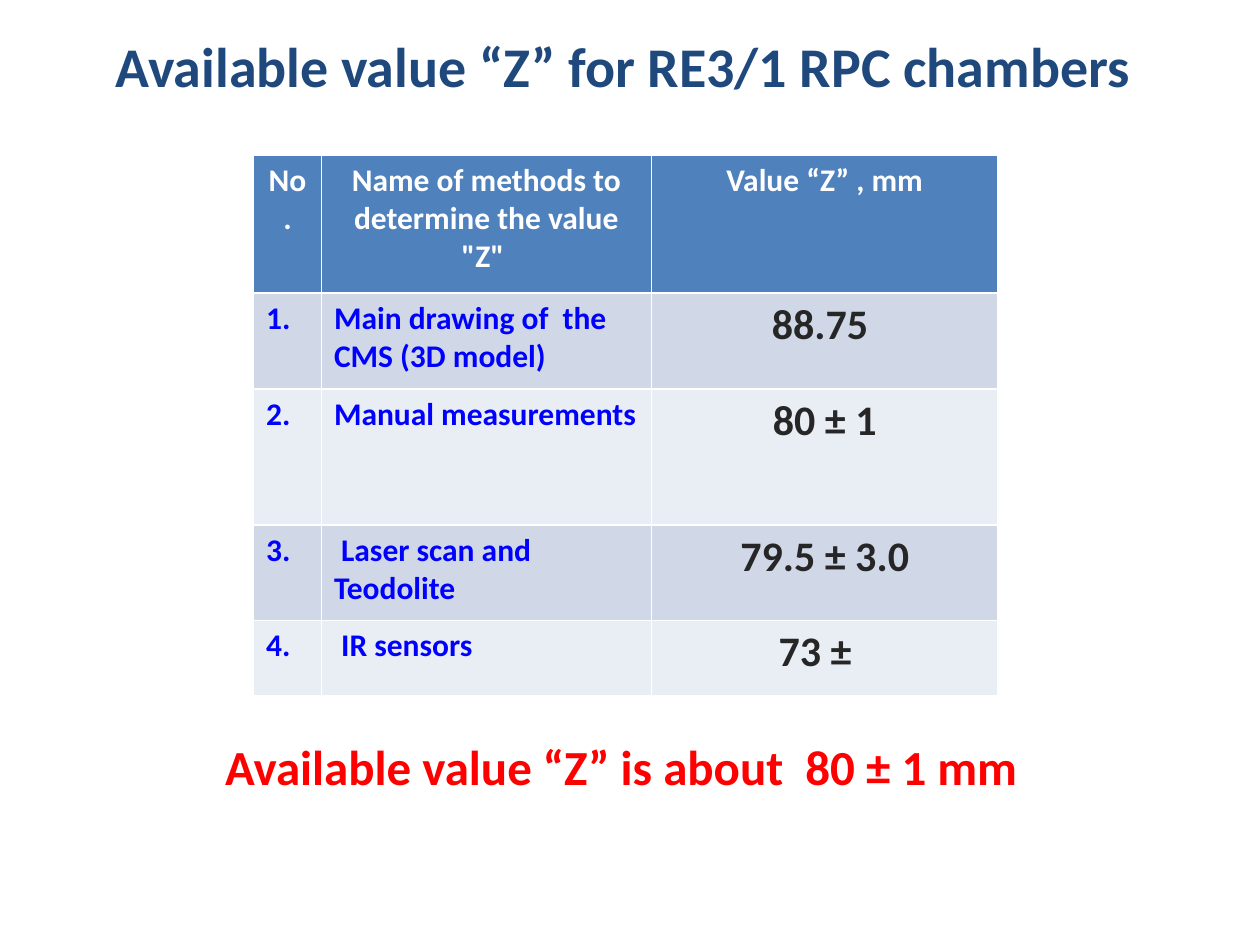
from pptx import Presentation
from pptx.dml.color import RGBColor
from pptx.enum.text import MSO_ANCHOR, PP_ALIGN
from pptx.util import Cm, Pt

LEFT, CENTER = PP_ALIGN.LEFT, PP_ALIGN.CENTER
MIDDLE = MSO_ANCHOR.MIDDLE
TITLE_ONLY = 5


def color(value):
    return RGBColor.from_string(value)


def write(frame, text, size, text_color, alignment=LEFT):
    frame.word_wrap = True
    paragraph = frame.paragraphs[0]
    paragraph.alignment = alignment
    run = paragraph.add_run()
    run.text = text
    run.font.name = "Calibri"
    run.font.size = Pt(size)
    run.font.bold = True
    run.font.color.rgb = color(text_color)


presentation = Presentation()
presentation.slide_width = Cm(25.4)
presentation.slide_height = Cm(19.05)
slide = presentation.slides.add_slide(presentation.slide_layouts[TITLE_ONLY])

title = slide.shapes.title
title.left, title.top, title.width, title.height = Cm(1.27), Cm(-0.28), Cm(22.86), Cm(3.18)
title.text_frame.vertical_anchor = MIDDLE
write(title.text_frame, "Available value “Z” for RE3/1 RPC chambers ", 32, "1F497D", CENTER)

rows = [
    ("No.", "Name of methods to determine the value \"Z\" ", "Value “Z” , mm"),
    ("1.", "Main drawing of  the CMS (3D model)", "88.75 "),
    ("2.", "Manual measurements", "80 ± 1"),
    ("3.", " Laser scan and Teodolite", "79.5 ± 3.0"),
    ("4.", " IR sensors", "73 ±  "),
]
column_widths = [1.37, 6.65, 6.99]
row_heights = [2.79, 1.93, 2.74, 1.93, 1.52]
column_styles = [(18, "0000FF", LEFT), (18, "0000FF", LEFT), (24, "262626", CENTER)]
header_style = (18, "FFFFFF", CENTER)
band_fills = ["E9EDF4", "D0D8E8"]

table = slide.shapes.add_table(
    len(rows), len(column_widths), Cm(5.11), Cm(3.12), Cm(sum(column_widths)), Cm(sum(row_heights))
).table
for column, width in zip(table.columns, column_widths):
    column.width = Cm(width)
for row_index, texts in enumerate(rows):
    table.rows[row_index].height = Cm(row_heights[row_index])
    for column_index, text in enumerate(texts):
        cell = table.cell(row_index, column_index)
        cell.fill.solid()
        cell.fill.fore_color.rgb = color(band_fills[row_index % 2] if row_index else "4F81BD")
        style = column_styles[column_index] if row_index else header_style
        write(cell.text_frame, text, *style)

conclusion = slide.shapes.add_textbox(Cm(4.29), Cm(14.73), Cm(21.59), Cm(1.45))
write(conclusion.text_frame, "Available value “Z” is about  80 ± 1 mm", 28, "FF0000")

presentation.save("out.pptx")
